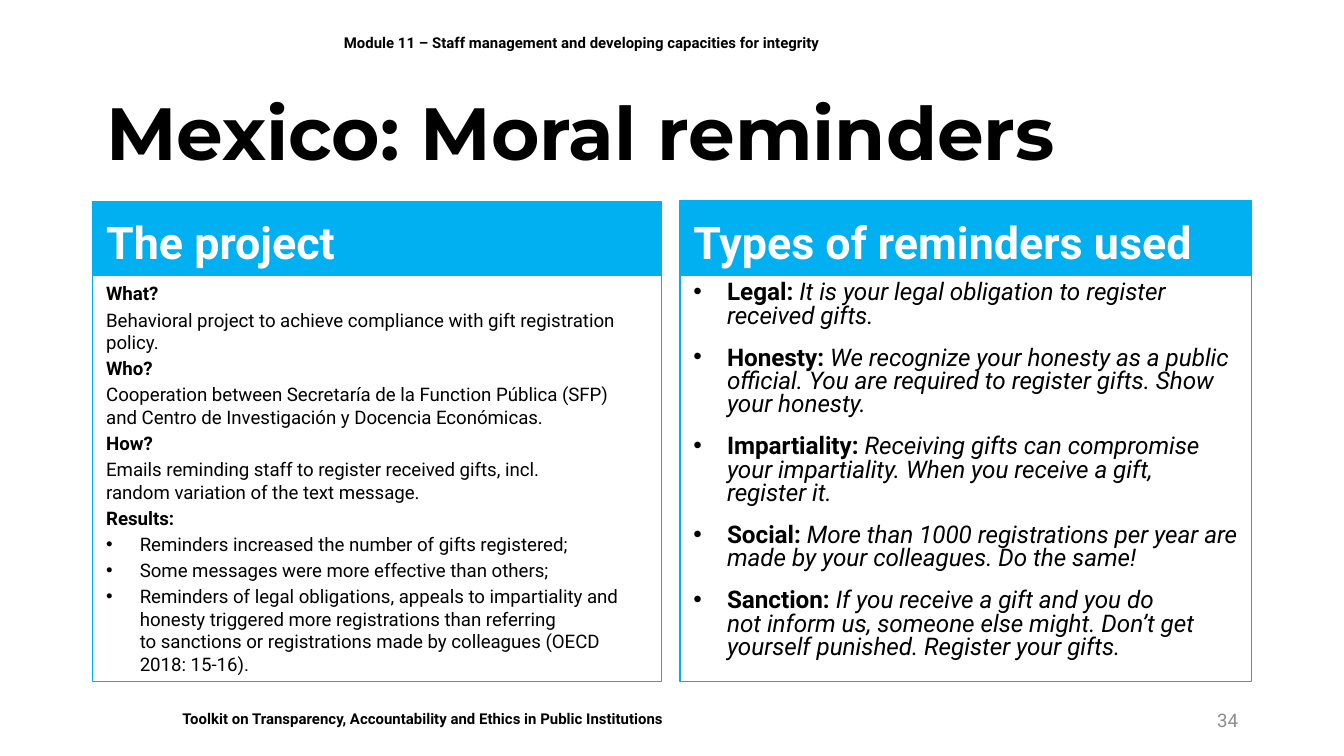
from dataclasses import dataclass

from pptx import Presentation
from pptx import util as u
from pptx.dml.color import RGBColor
from pptx.enum import text as t
from pptx.oxml.ns import qn


@dataclass(frozen=True)
class Theme:
    """Colours, fonts and type sizes of the deck."""

    ink: str = "000000"
    paper: str = "FFFFFF"
    accent: str = "00B0F0"
    muted: str = "8C8C8C"
    heading_font: str = "Montserrat"
    body_font: str = "Roboto"
    title: float = 39.6
    heading: float = 24
    reminder: float = 13
    body: float = 10
    small: float = 8


@dataclass(frozen=True)
class Box:
    """Position and size in inches."""

    left: float
    top: float
    width: float
    height: float


@dataclass(frozen=True)
class Run:
    """Text with its emphasis."""

    text: str
    bold: bool = False
    italic: bool = False


@dataclass(frozen=True)
class Item:
    """One paragraph made of runs."""

    runs: tuple[Run, ...]
    bullet: bool = False


@dataclass(frozen=True)
class Panel:
    """A headed column and the placeholders that hold it."""

    heading: str
    items: list[Item]
    left: float
    top: float
    width: float
    first_index: int
    size: float
    line_spacing: float
    space_before: float


THEME = Theme()
PANEL_SPLIT = 2.05
PANEL_BOTTOM = 5.07
TIE = "~"
NO_BREAK_SPACE = chr(160)

PROJECT = [
    ("What?", ["Behavioral project to achieve compliance with gift registration policy."]),
    ("Who?", ["Cooperation between~Secretaría~de la Function~Pública~(SFP) and~Centro de~Investigación~y~Docencia~Económicas."]),
    ("How?", ["Emails reminding staff to register received gifts, incl. random~variation of the text message."]),
    ("Results:", [
        "Reminders increased the number of gifts registered;",
        "Some messages were more effective than others;",
        "Reminders of legal obligations, appeals to impartiality~and honesty triggered more registrations than referring to~sanctions or registrations made by colleagues (OECD 2018: 15-16).",
    ]),
]

REMINDERS = [
    ("Legal:~", "It is~your legal obligation to register received gifts.~"),
    ("Honesty:~", "We recognize your honesty as a public official.~You are~required to register gifts. Show your honesty.~"),
    ("Impartiality:~", "Receiving gifts can compromise your impartiality.~When you receive a gift, register it.~"),
    ("Social:~", "More than 1000 registrations per year are made by your~colleagues.~Do~the same!~"),
    ("Sanction:~", "If you receive a gift and you~do not~inform us,~someone else might.~Don’t~get yourself punished. Register your~gifts."),
]


def project_items() -> list[Item]:
    """Turn questions and answers into paragraphs, with bullets for several answers."""
    items = []
    for question, answers in PROJECT:
        items.append(Item((Run(question, bold=True),)))
        items += [Item((Run(answer),), bullet=len(answers) > 1) for answer in answers]
    return items


def place(shape, box: Box) -> None:
    """Move and size a shape."""
    shape.left, shape.top = u.Inches(box.left), u.Inches(box.top)
    shape.width, shape.height = u.Inches(box.width), u.Inches(box.height)


def set_bullet(paragraph, shown: bool) -> None:
    """Show or remove the bullet and its hanging indent."""
    properties = paragraph._p.get_or_add_pPr()
    indent = u.Inches(0.25) if shown else 0
    properties.set("marL", str(indent))
    properties.set("indent", str(-indent))
    if shown:
        font = properties.makeelement(qn("a:buFont"), {"typeface": "Arial"})
        mark = properties.makeelement(qn("a:buChar"), {"char": "•"})
        properties.extend([font, mark])
    else:
        properties.append(properties.makeelement(qn("a:buNone"), {}))


def write(shape, content: str | list[Item], *, size: float, font: str = THEME.body_font,
          color: str = THEME.ink, bold: bool = True, align=t.PP_ALIGN.LEFT,
          anchor=t.MSO_ANCHOR.TOP, line_spacing: float = 1.0, space_before: float = 0) -> None:
    """Fill a shape with formatted paragraphs."""
    frame = shape.text_frame
    frame.word_wrap = True
    frame.auto_size = t.MSO_AUTO_SIZE.NONE
    frame.vertical_anchor = anchor
    items = [Item((Run(content, bold),))] if isinstance(content, str) else content
    for number, item in enumerate(items):
        paragraph = frame.add_paragraph() if number else frame.paragraphs[0]
        set_bullet(paragraph, item.bullet)
        paragraph.alignment = align
        paragraph.line_spacing = line_spacing
        paragraph.space_before = u.Pt(space_before if number else 0)
        paragraph.space_after = u.Pt(0)
        for part in item.runs:
            run = paragraph.add_run()
            run.text = part.text.replace(TIE, NO_BREAK_SPACE)
            run.font.name = font
            run.font.size = u.Pt(size)
            run.font.bold = part.bold
            run.font.italic = part.italic
            run.font.color.rgb = RGBColor.from_string(color)


def draw_panel(slide, panel: Panel) -> None:
    """Draw a filled heading above an outlined list."""
    heading = slide.placeholders[panel.first_index]
    body = slide.placeholders[panel.first_index + 1]
    place(heading, Box(panel.left, panel.top, panel.width, PANEL_SPLIT - panel.top))
    place(body, Box(panel.left, PANEL_SPLIT, panel.width, PANEL_BOTTOM - PANEL_SPLIT))
    for shape in (heading, body):
        shape.line.color.rgb = RGBColor.from_string(THEME.accent)
        shape.line.width = u.Pt(0.75)
    heading.fill.solid()
    heading.fill.fore_color.rgb = RGBColor.from_string(THEME.accent)
    write(heading, panel.heading, size=THEME.heading, color=THEME.paper,
          anchor=t.MSO_ANCHOR.BOTTOM, line_spacing=0.9)
    write(body, panel.items, size=panel.size, line_spacing=panel.line_spacing,
          space_before=panel.space_before)


def add_label(slide, content: str, box: Box, **style) -> None:
    """Add a text box with one line of text."""
    label = slide.shapes.add_textbox(0, 0, 0, 0)
    place(label, box)
    write(label, content, **style)


def main() -> None:
    """Build and save the slide."""
    presentation = Presentation()
    presentation.slide_width, presentation.slide_height = u.Inches(10), u.Inches(10 * 9 / 16)
    slide = presentation.slides.add_slide(presentation.slide_layouts.get_by_name("Comparison"))

    title = slide.shapes.title
    place(title, Box(0.69, 0.64, 8.62, 0.75))
    write(title, "Mexico: Moral reminders", size=THEME.title, font=THEME.heading_font,
          anchor=t.MSO_ANCHOR.MIDDLE, line_spacing=0.9)

    reminders = [Item((Run(name, bold=True), Run(message, italic=True)), bullet=True)
                 for name, message in REMINDERS]
    draw_panel(slide, Panel("The project", project_items(), 0.69, 1.5, 4.23, 1,
                            THEME.body, 1.0, 2))
    draw_panel(slide, Panel("Types of reminders used", reminders, 5.06, 1.49, 4.25, 3,
                            THEME.reminder, 0.8, 10))

    add_label(slide, "Module 11 – Staff management and developing capacities for integrity",
              Box(2.46, 0.1, 6.85, 0.44), size=THEME.small, anchor=t.MSO_ANCHOR.MIDDLE)
    add_label(slide, "Toolkit on Transparency, Accountability and Ethics in Public Institutions",
              Box(1.26, 5.23, 7.17, 0.24), size=THEME.small)
    add_label(slide, "34", Box(7.06, 5.21, 2.25, 0.3), size=THEME.body, color=THEME.muted,
              bold=False, align=t.PP_ALIGN.RIGHT, anchor=t.MSO_ANCHOR.MIDDLE)
    presentation.save("out.pptx")


if __name__ == "__main__":
    main()
